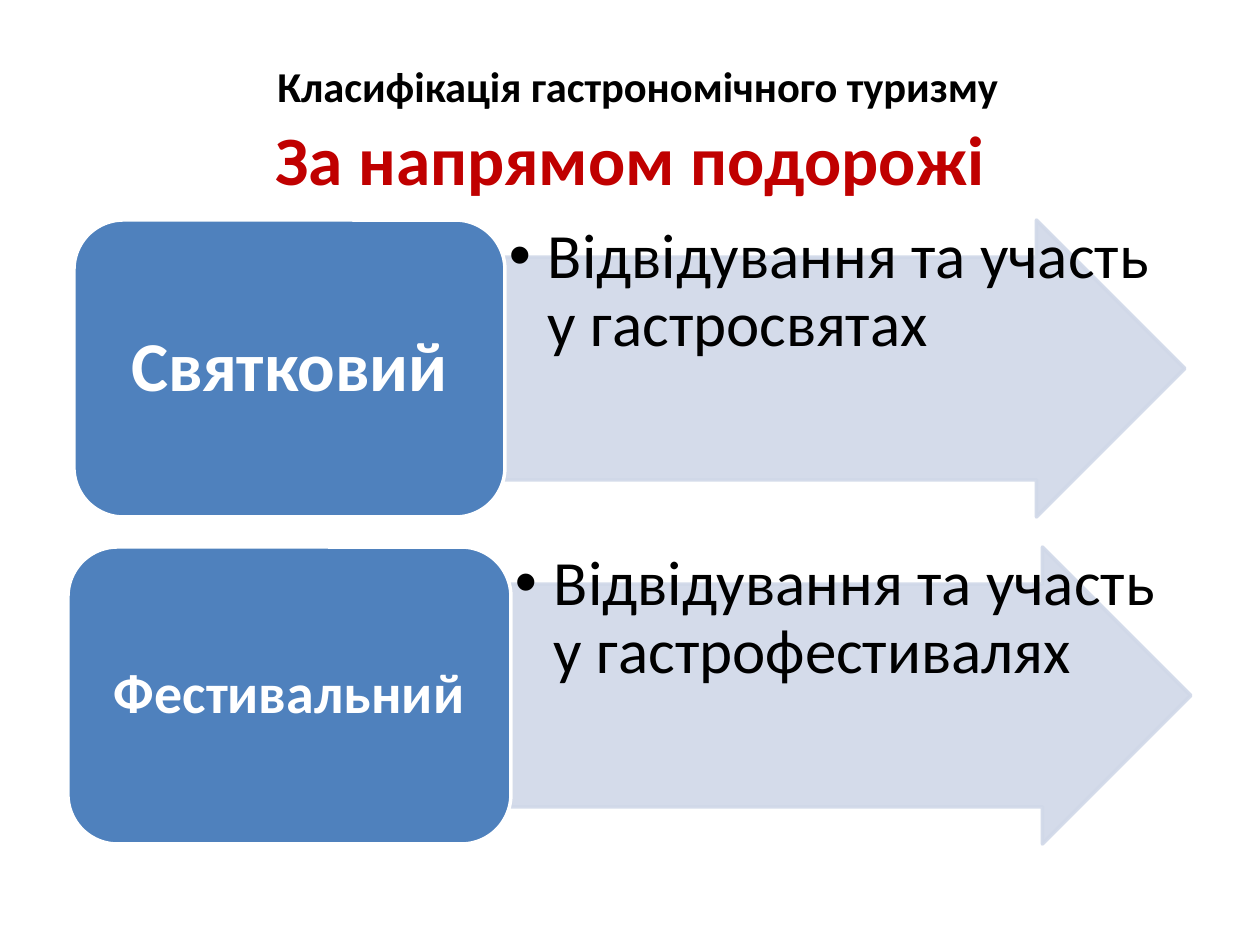
from lxml import etree
from pptx import Presentation
from pptx import util as u
from pptx.dml.color import RGBColor
from pptx.enum import shapes, text
from pptx.oxml.ns import qn

PX = u.Inches(1) / 126
FONT = "Calibri"
BLACK, WHITE, RED = "000000", "FFFFFF", "C00000"
BLUE, PALE = "4F81BD", "D0D8E8"


def px(length):
    return u.Emu(round(length * PX))


def paint(target, color, opacity=None):
    """Give a fill a solid colour, with opacity in percent."""
    target.solid()
    target.fore_color.rgb = RGBColor.from_string(color)
    if opacity:
        for node in target._xPr.iter(qn("a:srgbClr")):
            etree.SubElement(node, qn("a:alpha"), val=str(opacity * 1000))


def style(span, size, color, bold=False):
    span.font.name = FONT
    span.font.size = u.Pt(size)
    span.font.bold = bold
    span.font.color.rgb = RGBColor.from_string(color)


def add_block(page, kind, box, fill, line, opacity=None):
    block = page.shapes.add_shape(kind, *map(px, box))
    block.shadow.inherit = False
    paint(block.fill, fill, opacity)
    paint(block.line.fill, line, opacity)
    block.line.width = u.Pt(2)
    return block


def set_frame(frame, anchor, across, down):
    frame.word_wrap = True
    frame.vertical_anchor = anchor
    frame.margin_left = frame.margin_right = px(across)
    frame.margin_top = frame.margin_bottom = px(down)


def add_bullet(para, indent):
    props = para._p.get_or_add_pPr()
    props.set("marL", str(px(indent)))
    props.set("indent", str(-px(indent)))
    etree.SubElement(props, qn("a:buFont"), typeface="Arial")
    etree.SubElement(props, qn("a:buChar"), char="•")


def add_title(page, box):
    title = page.shapes.add_textbox(*map(px, box))
    set_frame(title.text_frame, text.MSO_ANCHOR.MIDDLE, 13, 6)
    para = title.text_frame.paragraphs[0]
    para.alignment = text.PP_ALIGN.CENTER
    para.text = " "
    style(para.runs[0], 39.6, BLACK)
    heading = para.add_run()
    heading.text = "Класифікація гастрономічного туризму"
    style(heading, 24.3, BLACK, bold=True)
    para.add_line_break()
    subject = para.add_run()
    subject.text = "За напрямом подорожі"
    style(subject, 39.6, RED, bold=True)


def add_direction(page, box, label_width, label, label_size, margins, detail):
    """A rounded label on the left and an arrow with its description."""
    left, top, width, height = box
    arrow_box = (left + label_width, top, width - label_width, height)
    arrow = add_block(page, shapes.MSO_SHAPE.RIGHT_ARROW, arrow_box, PALE, PALE, 90)
    arrow.adjustments[0] = 0.75
    arrow.adjustments[1] = 0.5

    note = page.shapes.add_textbox(*map(px, arrow_box))
    set_frame(note.text_frame, text.MSO_ANCHOR.TOP, 4, 4)
    note.text_frame.text = detail
    para = note.text_frame.paragraphs[0]
    para.line_spacing = 0.9
    add_bullet(para, 39)
    style(para.runs[0], 36, BLACK)

    card = add_block(page, shapes.MSO_SHAPE.ROUNDED_RECTANGLE,
                     (left, top, label_width, height), BLUE, WHITE)
    set_frame(card.text_frame, text.MSO_ANCHOR.MIDDLE, *margins)
    card.text_frame.text = label
    para = card.text_frame.paragraphs[0]
    para.alignment = text.PP_ALIGN.CENTER
    para.line_spacing = 0.9
    style(para.runs[0], label_size, WHITE, bold=True)


def main():
    deck = Presentation()
    deck.slide_width, deck.slide_height = px(1260), px(945)
    page = deck.slides.add_slide(deck.slide_layouts[6])
    add_title(page, (63, 38, 1134, 157))
    add_direction(page, (74, 220, 1111, 297), 431, "Святковий", 40, (21, 10),
                  "Відвідування та участь у гастросвятах")
    add_direction(page, (68, 547, 1123, 297), 443, "Фестивальний", 32, (16, 9),
                  "Відвідування та участь у гастрофестивалях")
    deck.save("out.pptx")


if __name__ == "__main__":
    main()
